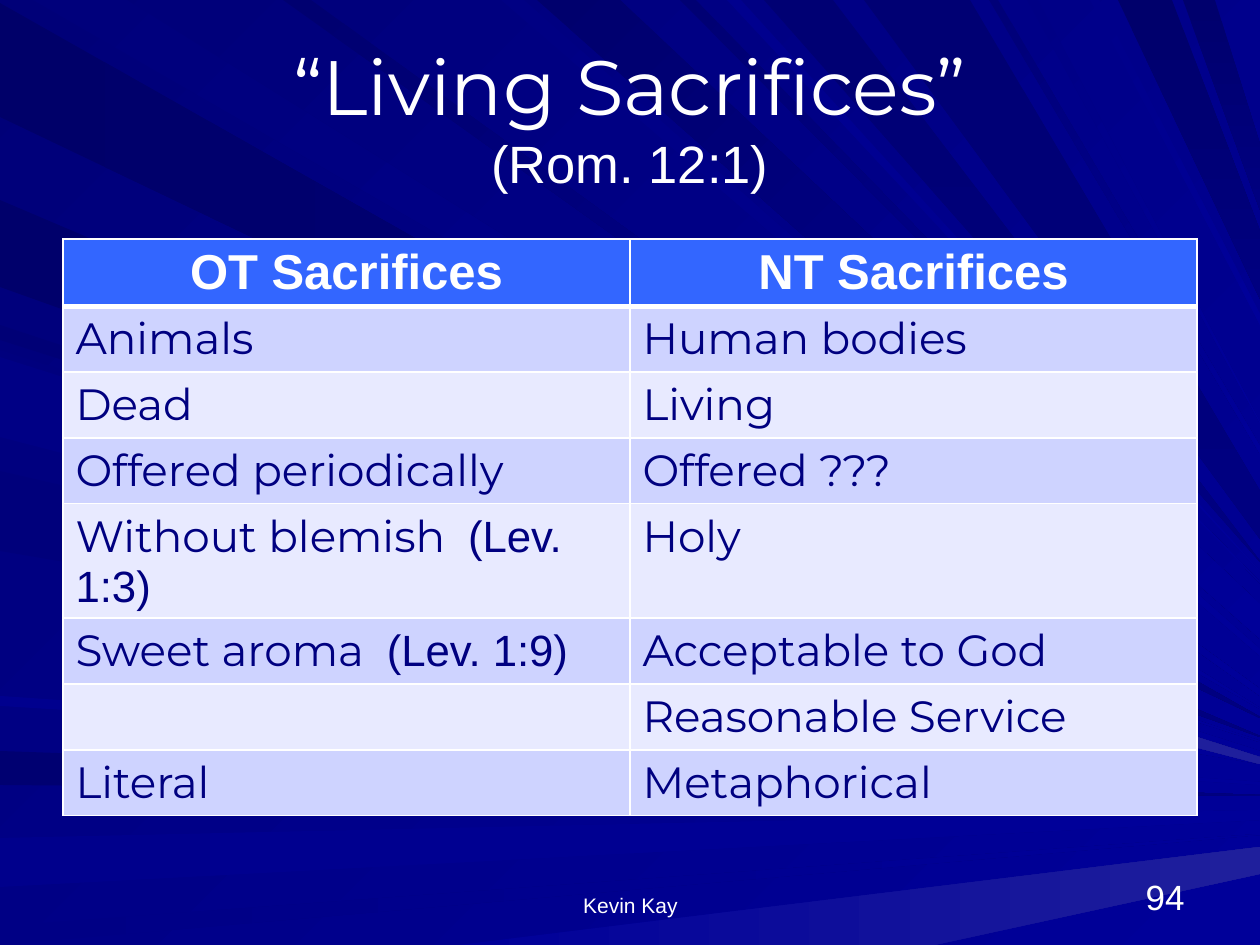
from lxml import etree
from pptx import Presentation
from pptx.dml.color import RGBColor
from pptx.enum import text as t
from pptx.oxml import ns
from pptx.util import Pt

PX = 914400 / 126
WIDE, HIGH = 1260, 945
THEME = {
    "white": "FFFFFF", "navy": "000080", "head": "3366FF",
    "bands": ("E8EAFF", "CED3FF"), "back": ("000078", "000099", 45),
    "dim": "000080", "glow": "000099", "sheen": "1F1F9C",
    "sans": "Arial", "face": "Montserrat",
    "title": 44, "verse": 30, "top": 28, "cell": 25, "foot": 12, "page": 20,
}
EDGES = {
    "left": lambda spot: (0, spot),
    "top": lambda spot: (spot, 0),
    "bottom": lambda spot: (spot, HIGH),
}
FIELDS = ("edge", "root", "span", "tip", "thick", "dark", "light")
RAYS = [
    ("left", 3, 114, 717, 1, "69", "dim"),
    ("top", 33, 94, 708, 1, "7B", "glow"),
    ("left", 751, 34, 795, 1, "71", "dim"),
    ("left", 838, 49, 810, 10, "8C", "glow"),
    ("left", 926, 19, 834, 1, "85", "glow"),
    ("bottom", 459, 476, 847, 27, "99", "sheen"),
    ("left", 325, 15, 741, 1, "76", "glow"),
    ("left", 200, 87, 736, 1, "6B", "dim"),
    ("top", 501, 23, 649, 7, "83", "glow"),
    ("top", 537, 83, 604, 35, "6D", "glow"),
    ("top", 680, 16, 582, 1, "73", "glow"),
    ("top", 764, 69, 561, 1, "73", "dim"),
    ("top", 1118, 54, 231, 68, "6B", "dim"),
    ("top", 1183, 32, 144, 66, "6D", "dim"),
    ("left", 350, 81, 751, 8, "7E", "glow"),
    ("left", 471, 80, 762, 2, "7B", "glow"),
    ("left", 696, 10, 782, 3, "8E", "glow"),
    ("top", 283, 28, 689, 7, "70", "glow"),
    ("top", 727, 14, 571, 1, "8E", "glow"),
    ("top", 864, 106, 491, 48, "73", "dim"),
    ("top", 989, 9, 446, 8, "78", "glow"),
    ("top", 1027, 11, 422, 1, "85", "glow"),
    ("top", 1090, 9, 314, 11, "8A", "glow"),
    ("left", 357, 80, 757, 7, "85", "sheen"),
]
ROWS = [
    ("OT Sacrifices", "NT Sacrifices"),
    ("Animals", "Human bodies"),
    ("Dead", "Living"),
    ("Offered periodically", "Offered ???"),
    ("Without blemish  |(Lev. 1:3)", "Holy"),
    ("Sweet aroma  |(Lev. 1:9)", "Acceptable to God"),
    ("", "Reasonable Service"),
    ("Literal", "Metaphorical"),
]
FOOT = [
    ("Kevin Kay", 431, 399, "foot", t.PP_ALIGN.CENTER),
    ("94", 903, 294, "page", t.PP_ALIGN.RIGHT),
]


def blend(fill, start, end, turn):
    fill.gradient()
    fill.gradient_angle = (360 - turn) % 360
    for stop, tone in zip(fill.gradient_stops, (start, end)):
        stop.color.rgb = RGBColor.from_string(tone)


def write(par, words, size, face, tone="white", bold=False):
    run = par.add_run()
    run.text = words
    look = {"size": Pt(THEME[size]), "name": THEME[face], "bold": bold}
    for key, val in look.items():
        setattr(run.font, key, val)
    run.font.color.rgb = RGBColor.from_string(THEME[tone])


deck = Presentation()
deck.slide_width, deck.slide_height = round(WIDE * PX), round(HIGH * PX)
slide = deck.slides.add_slide(deck.slide_layouts[5])
blend(slide.background.fill, *THEME["back"])

for row in RAYS:
    ray = dict(zip(FIELDS, row))
    spot = EDGES[ray["edge"]]
    near, far = spot(ray["root"]), spot(ray["root"] + ray["span"])
    upper, lower = (WIDE, ray["tip"]), (WIDE, ray["tip"] + ray["thick"])
    tips, turn = (lower, upper), 0
    if ray["edge"] == "top":
        tips, turn = (upper, lower), 90 if ray["light"] == "dim" else 45
    pen = slide.shapes.build_freeform(*near, scale=PX)
    pen.add_line_segments((far, *tips), close=True)
    beam = pen.convert_to_shape()
    beam.shadow.inherit = False
    beam.line.fill.background()
    blend(beam.fill, "0000" + ray["dark"], THEME[ray["light"]], turn)

title = slide.shapes.title
slide.shapes._spTree.append(title._element)
place = {"left": 63, "top": 38, "width": 1134, "height": 157}
for key, val in place.items():
    setattr(title, key, round(val * PX))
frame = title.text_frame
flags = {"auto_size": t.MSO_AUTO_SIZE.NONE, "vertical_anchor": t.MSO_ANCHOR.MIDDLE}
for key, val in flags.items():
    setattr(frame, key, val)
par = frame.paragraphs[0]
par.alignment = t.PP_ALIGN.CENTER
write(par, "“Living Sacrifices”", "title", "face")
par.add_line_break()
write(par, "(Rom. 12:1)", "verse", "sans")

area = [round(n * PX) for n in (63, 239, 1134, 52 * len(ROWS))]
table = slide.shapes.add_table(len(ROWS), 2, *area).table
for r, row in enumerate(ROWS):
    tone = THEME["bands"][r % 2] if r else THEME["head"]
    for c, words in enumerate(row):
        cell = table.cell(r, c)
        cell.fill.solid()
        cell.fill.fore_color.rgb = RGBColor.from_string(tone)
        par = cell.text_frame.paragraphs[0]
        if r == 0:
            par.alignment = t.PP_ALIGN.CENTER
            write(par, words, "top", "sans", bold=True)
        elif words:
            for part, face in zip(words.split("|"), ("face", "sans")):
                write(par, part, "cell", face, "navy")
        else:
            par.font.size = Pt(THEME["cell"])
        props = cell._tc.get_or_add_tcPr()
        for i, side in enumerate("LRTB"):
            thick = (r, side) in ((0, "B"), (1, "T"))
            rule = etree.Element(ns.qn("a:ln" + side), w=str(Pt(3 if thick else 1)))
            ink = etree.SubElement(rule, ns.qn("a:solidFill"))
            etree.SubElement(ink, ns.qn("a:srgbClr"), val=THEME["white"])
            props.insert(i, rule)

for words, left, width, size, side in FOOT:
    area = [round(n * PX) for n in (left, 861, width, 63)]
    frame = slide.shapes.add_textbox(*area).text_frame
    flags = {"word_wrap": True, "vertical_anchor": t.MSO_ANCHOR.BOTTOM}
    for key, val in flags.items():
        setattr(frame, key, val)
    par = frame.paragraphs[0]
    par.alignment = side
    write(par, words, size, "sans")

deck.save("out.pptx")
